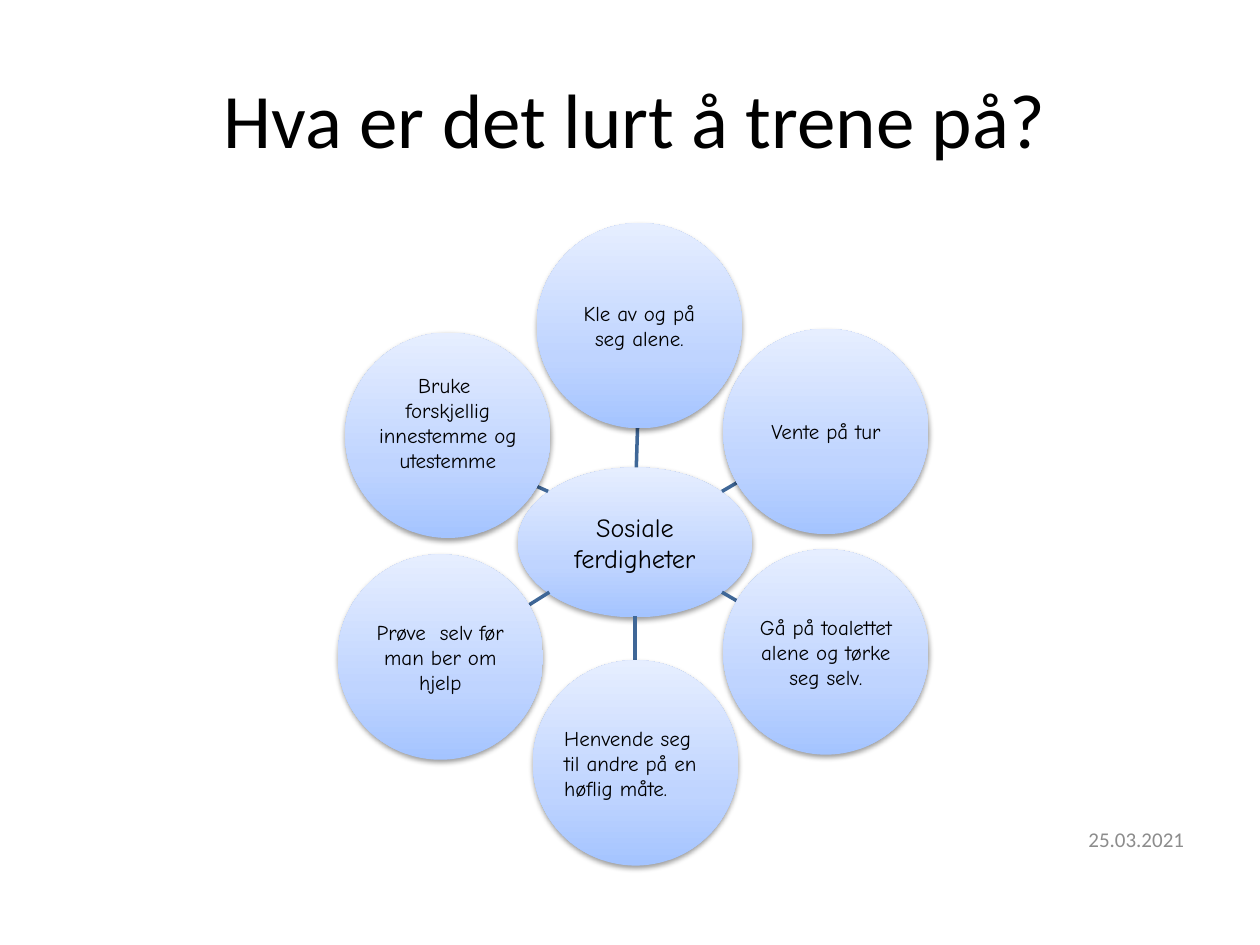
from copy import deepcopy
from lxml.etree import SubElement as Sub
from pptx import Presentation
from pptx.dml.color import RGBColor
from pptx.enum.shapes import MSO_CONNECTOR as Conn, MSO_SHAPE as Kind
from pptx.enum.text import MSO_ANCHOR as Anchor, PP_ALIGN as Align
from pptx.oxml.ns import qn
from pptx.util import Pt

SCALE = 9144
STOPS = [(0, "A4C4FF"), (0.35, "BFD4FF"), (1, "E6EEFF")]
SIDE = 163
HUB = (143, 194, 186, 119)
RING = [
    ("Kle av og på seg alene.", (158, 0), (237, 194, 238, 162), {}),
    ("Vente på tur", (306, 84), (305, 213, 317, 206), {}),
    ("Gå på toalettet alene og tørke seg selv.", (306, 259), (305, 293, 317, 300), {}),
    ("Henvende seg til andre på en høflig måte.", (155, 347), (236, 312, 236, 347),
     {"align": Align.LEFT}),
    ("Prøve  selv før man ber om hjelp", (0, 263), (168, 293, 152, 303), {}),
    ("Bruke  forskjellig innestemme og utestemme", (6, 87), (167, 213, 158, 209),
     {"foot": 21}),
]


def px(*nums):
    return [round(n * SCALE) for n in nums]


def color(code):
    return RGBColor.from_string(code)


def write(shape, text, size=12, font="Comic Neue", ink="000000",
          align=Align.CENTER, anchor=Anchor.MIDDLE, pad=(1, 1), foot=None):
    frame = shape.text_frame
    frame.word_wrap = True
    frame.vertical_anchor = anchor
    side, top = px(*pad)
    frame.margin_left = frame.margin_right = side
    frame.margin_top = frame.margin_bottom = top
    if foot:
        frame.margin_bottom = px(foot)[0]
    para = frame.paragraphs[0]
    para.alignment = align
    run = para.add_run()
    run.text = text
    run.font.size = Pt(size)
    run.font.name = font
    run.font.color.rgb = color(ink)


def label(slide, box, text, **style):
    write(slide.shapes.add_textbox(*px(*box)), text,
          font="Calibri", pad=(10, 5), **style)


def bubble(slide, box, text, **style):
    shape = slide.shapes.add_shape(Kind.OVAL, *px(*box))
    shape.line.fill.background()
    fill = shape.fill
    fill.gradient()
    fill.gradient_angle = 90
    props = shape._element.spPr
    first = props.find(".//" + qn("a:gs"))
    first.addnext(deepcopy(first))
    for stop, (place, code) in zip(fill.gradient_stops, STOPS):
        stop.position = place
        stop.color.rgb = color(code)
    shape.shadow.inherit = False
    shade = Sub(props.find(qn("a:effectLst")), qn("a:outerShdw"), blurRad="40000",
                dist="20000", dir="5400000", rotWithShape="0")
    tint = Sub(shade, qn("a:srgbClr"), val="000000")
    Sub(tint, qn("a:alpha"), val="38000")
    write(shape, text, **style)


def spoke(slide, ends):
    line = slide.shapes.add_connector(Conn.STRAIGHT, *px(*ends))
    line.line.color.rgb = color("3F6797")
    line.line.width = Pt(2)
    Sub(line._element.spPr, qn("a:effectLst"))


def wheel(slide, left, top):
    x, y, wide, high = HUB
    bubble(slide, (left + x, top + y, wide, high), "Sosiale ferdigheter", size=15)
    for text, (x, y), (ax, ay, bx, by), style in RING:
        spoke(slide, (left + ax, top + ay, left + bx, top + by))
        bubble(slide, (left + x, top + y, SIDE, SIDE), text, **style)


def main():
    deck = Presentation()
    deck.slide_width, deck.slide_height = px(1000, 750)
    slide = deck.slides.add_slide(deck.slide_layouts[6])
    label(slide, (854, 646, 121, 40), "25.03.2021", ink="8C8C8C", align=Align.LEFT)
    label(slide, (51, 52, 906, 118), "Hva er det lurt å trene på?",
          size=44, anchor=Anchor.TOP)
    wheel(slide, 268, 177)
    deck.save("out.pptx")


if __name__ == "__main__":
    main()
